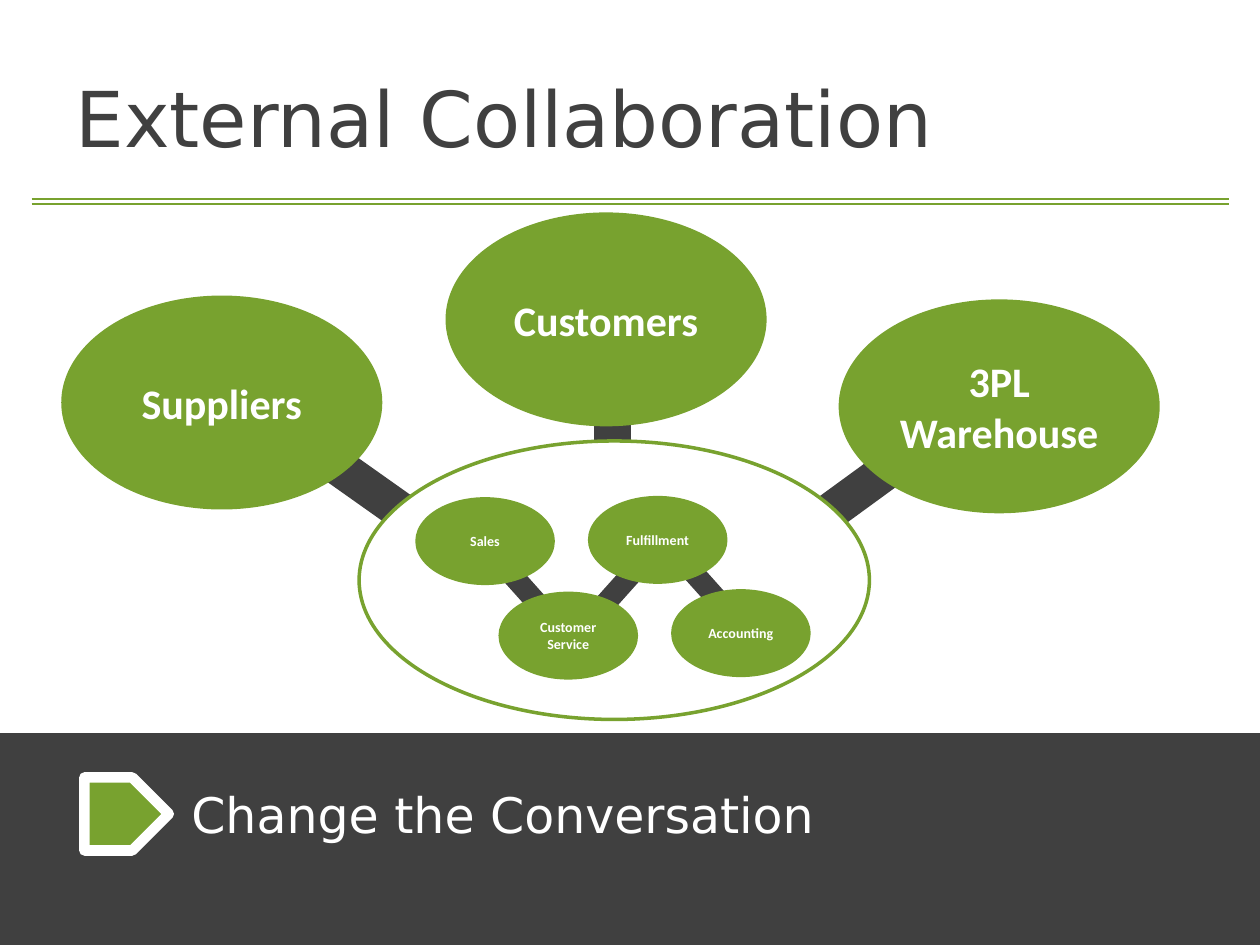
from dataclasses import dataclass
from lxml import etree
from pptx import Presentation
from pptx import util as u
from pptx.dml.color import RGBColor
from pptx.enum import shapes, text
from pptx.oxml import ns


@dataclass(frozen=True)
class Theme:
    green: RGBColor = RGBColor(0x78, 0xA2, 0x2F)
    dark: RGBColor = RGBColor(0x40, 0x40, 0x40)
    white: RGBColor = RGBColor(0xFF, 0xFF, 0xFF)
    heading_font: str = "DejaVu Sans"
    label_font: str = "Calibri"
    title_size: int = 44
    message_size: int = 28
    partner_size: int = 24
    department_size: int = 8


theme = Theme()
kinds = shapes.MSO_SHAPE


def write(shape, words, name, size, color, bold=False, align=text.PP_ALIGN.LEFT):
    frame = shape.text_frame
    frame.word_wrap = True
    frame.vertical_anchor = text.MSO_ANCHOR.MIDDLE
    paragraph = frame.paragraphs[0]
    paragraph.text = words
    paragraph.alignment = align
    font = paragraph.runs[0].font
    for attribute, value in {"name": name, "size": u.Pt(size), "bold": bold}.items():
        setattr(font, attribute, value)
    font.color.rgb = color


def draw(kind, box, fill, line, width=2, rotation=0):
    shape = slide.shapes.add_shape(kind, *map(u.Inches, box))
    shape.shadow.inherit = False
    shape.rotation = rotation
    shape.fill.solid()
    shape.fill.fore_color.rgb = fill
    shape.line.color.rgb = line
    shape.line.width = u.Pt(width)
    return shape


presentation = Presentation()
presentation.slide_width = u.Inches(10)
presentation.slide_height = u.Inches(7.5)
slide = presentation.slides.add_slide(presentation.slide_layouts[5])

title = slide.shapes.title
title_box = {"left": 0.5, "top": 0.3, "width": 9, "height": 1.25}
for attribute, value in title_box.items():
    setattr(title, attribute, u.Inches(value))
write(title, "External Collaboration", theme.heading_font, theme.title_size, theme.dark)

for y in (1.58, 1.62):
    rule = slide.shapes.add_connector(
        shapes.MSO_CONNECTOR.STRAIGHT,
        u.Inches(0.25), u.Inches(y), u.Inches(9.75), u.Inches(y),
    )
    rule.line.color.rgb = theme.green
    rule.line.width = u.Pt(1.5)
    etree.SubElement(rule._element.spPr, ns.qn("a:effectLst"))

partner_links = [(3.95, 3.32, 90), (5.99, 3.7, 323.9), (2.1, 3.8, 35.3)]
for left, top, rotation in partner_links:
    draw(kinds.RECTANGLE, (left, top, 1.82, 0.27), theme.dark, theme.dark, rotation=rotation)

draw(kinds.OVAL, (2.85, 3.5, 4.05, 2.21), theme.white, theme.green)

department_links = [(3.75, 4.64, 48.2), (5.25, 4.69, 48.2), (4.43, 4.64, 311.8)]
for left, top, rotation in department_links:
    draw(kinds.RECTANGLE, (left, top, 0.89, 0.14), theme.dark, theme.dark, rotation=rotation)

draw(kinds.RECTANGLE, (0, 5.83, 10, 1.67), theme.dark, theme.dark)
message = slide.shapes.add_textbox(*map(u.Inches, (1.42, 6.17, 6.58, 0.58)))
write(message, "Change the Conversation", theme.heading_font, theme.message_size, theme.white)

departments = [
    ("Sales", 3.31, 3.96),
    ("Customer Service", 3.97, 4.71),
    ("Fulfillment", 4.68, 3.95),
    ("Accounting", 5.34, 4.69),
]
partners = [
    ("Customers", 3.55, 1.7),
    ("Suppliers", 0.5, 2.36),
    ("3PL Warehouse", 6.67, 2.39),
]
groups = [
    (departments, 1.08, 0.67, theme.department_size),
    (partners, 2.52, 1.67, theme.partner_size),
]
for members, width, height, size in groups:
    for label, left, top in members:
        oval = draw(kinds.OVAL, (left, top, width, height), theme.green, theme.green)
        write(oval, label, theme.label_font, size, theme.white, True, text.PP_ALIGN.CENTER)

draw(kinds.PENTAGON, (0.67, 6.17, 0.67, 0.58), theme.green, theme.white, width=6)

presentation.save("out.pptx")
